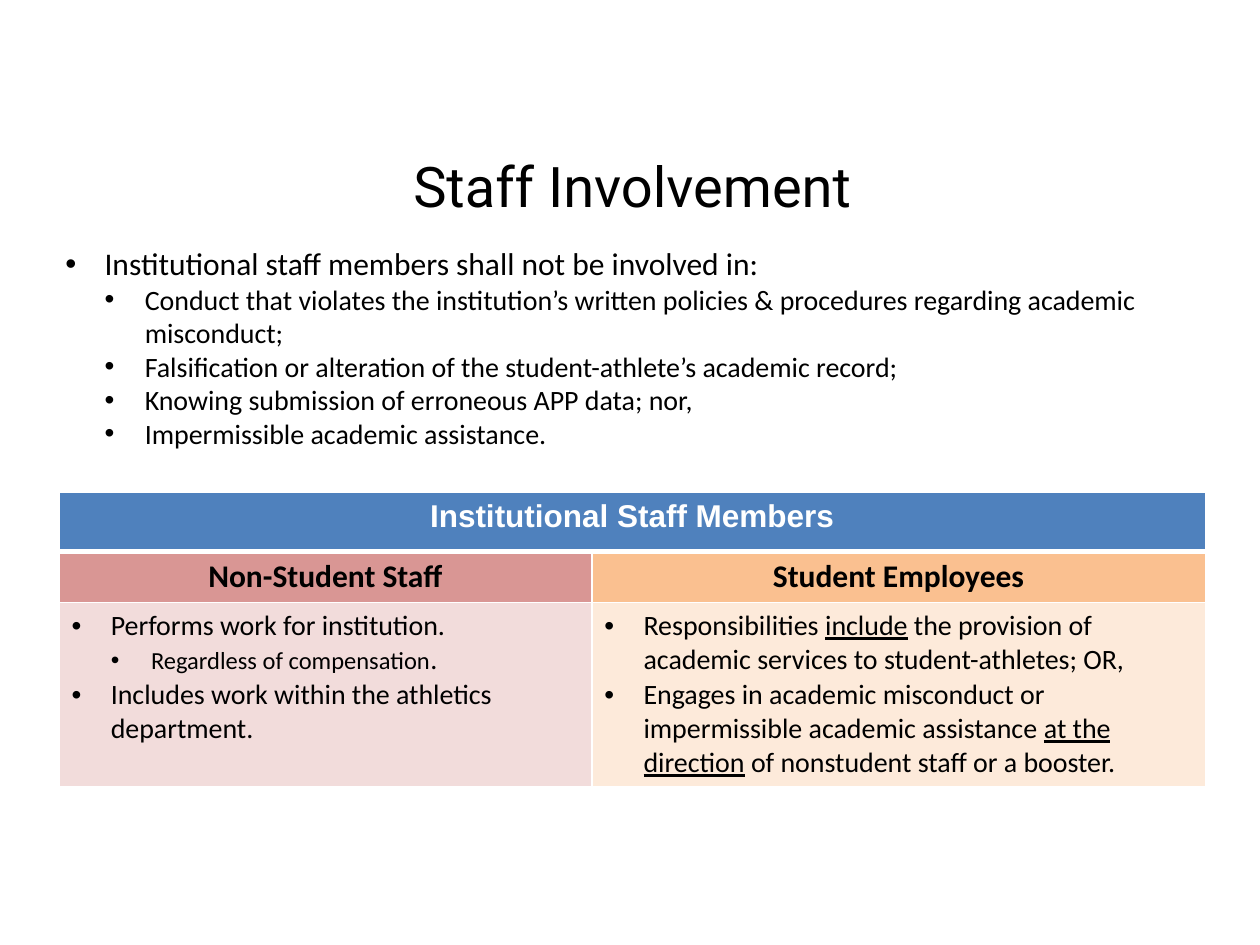
import pptx
import pptx.dml.color
import pptx.enum.text
import pptx.oxml
import pptx.oxml.ns
import pptx.util
from pptx.util import Cm

COLORS = {
    "white": "FFFFFF", "black": "000000", "blue": "4F81BD",
    "rose": "D99694", "pale_rose": "F2DCDB",
    "orange": "FAC090", "pale_orange": "FDEADA",
}
CENTER = pptx.enum.text.PP_ALIGN.CENTER
INDENTS = [(0.79, -0.79), (1.6, -0.81)]  # left margin and hanging indent in cm, by level

# A bullet is (level, spans); a span is (text, size, underlined).
RULES = [(0, [("Institutional staff members shall not be involved in:", 18, False)])] + [
    (1, [(text, 16, False)]) for text in (
        "Conduct that violates the institution’s written policies & procedures "
        "regarding academic misconduct;",
        "Falsification or alteration of the student-athlete’s academic record;",
        "Knowing submission of erroneous APP data; nor,",
        "Impermissible academic assistance.",
    )
]
NON_STUDENT = [
    (0, [("Performs work for institution.", 16, False)]),
    (1, [("Regardless of compensation", 14, False), (".", 16, False)]),
    (0, [("Includes work within the athletics department.", 16, False)]),
]
STUDENT = [
    (0, [("Responsibilities ", 16, False), ("include", 16, True),
         (" the provision of academic services to student-athletes; OR,", 16, False)]),
    (0, [("Engages in academic misconduct or impermissible academic assistance ", 16, False),
         ("at the direction", 16, True),
         (" of nonstudent staff or a booster.", 16, False)]),
]


def rgb(name):
    return pptx.dml.color.RGBColor.from_string(COLORS[name])


def style_span(span, size, font="Calibri", color="black", bold=False):
    span.font.size = pptx.util.Pt(size)
    span.font.name = font
    span.font.bold = bold
    span.font.color.rgb = rgb(color)


def write_heading(frame, text, size, **style):
    frame.text = text
    para = frame.paragraphs[0]
    para.alignment = CENTER
    style_span(para.runs[0], size, **style)


def write_bullets(frame, bullets):
    for index, (level, spans) in enumerate(bullets):
        para = frame.add_paragraph() if index else frame.paragraphs[0]
        para.level = level
        margin, indent = INDENTS[level]
        properties = para._p.get_or_add_pPr()
        properties.set("marL", str(Cm(margin)))
        properties.set("indent", str(Cm(indent)))
        namespace = pptx.oxml.ns.nsdecls("a")
        for tag in ('buFont typeface="Arial"', 'buChar char="•"'):
            properties.append(pptx.oxml.parse_xml(
                f"<a:{tag.replace(' ', f' {namespace} ', 1)}/>"))
        for text, size, underlined in spans:
            span = para.add_run()
            span.text = text
            style_span(span, size)
            if underlined:
                span.font.underline = True


def set_borders(cell, top=1, bottom=1):
    properties = cell._tc.get_or_add_tcPr()
    widths = {"lnL": 1, "lnR": 1, "lnT": top, "lnB": bottom}
    for position, (side, width) in enumerate(widths.items()):
        properties.insert(position, pptx.oxml.parse_xml(
            f'<a:{side} {pptx.oxml.ns.nsdecls("a")} w="{pptx.util.Pt(width)}">'
            f'<a:solidFill><a:srgbClr val="{COLORS["white"]}"/></a:solidFill></a:{side}>'))


def add_text_box(page, left, top, width, height):
    frame = page.shapes.add_textbox(Cm(left), Cm(top), Cm(width), Cm(height)).text_frame
    frame.word_wrap = True
    return frame


def add_title(page, *box):
    write_heading(add_text_box(page, *box), "Staff Involvement", 32, font="Roboto")


def add_rules(page, *box):
    write_bullets(add_text_box(page, *box), RULES)


def add_staff_table(page, left, top, width, height):
    table = page.shapes.add_table(3, 2, Cm(left), Cm(top), Cm(width), Cm(height)).table
    table.first_row = table.horz_banding = False
    first_column = 10.74
    for column, size in zip(table.columns, (first_column, width - first_column)):
        column.width = Cm(size)
    header, subheader = 1.19, 1
    for row, size in zip(table.rows, (header, subheader, height - header - subheader)):
        row.height = Cm(size)

    # Fills and borders, with a thick rule under the header
    fills = [("blue", "blue"), ("rose", "orange"), ("pale_rose", "pale_orange")]
    for row, names in enumerate(fills):
        for column, name in enumerate(names):
            cell = table.cell(row, column)
            cell.fill.solid()
            cell.fill.fore_color.rgb = rgb(name)
            set_borders(cell, top=3 if row == 1 else 1, bottom=3 if row == 0 else 1)

    # Spanning header
    table.cell(0, 0).merge(table.cell(0, 1))
    write_heading(table.cell(0, 0).text_frame, "Institutional Staff Members", 18,
                  font="Arial", color="white", bold=True)

    # One column for each kind of staff
    groups = [("Non-Student Staff", NON_STUDENT), ("Student Employees", STUDENT)]
    for column, (heading, bullets) in enumerate(groups):
        write_heading(table.cell(1, column).text_frame, heading, 18, bold=True)
        write_bullets(table.cell(2, column).text_frame, bullets)


def main():
    deck = pptx.Presentation()
    deck.slide_width, deck.slide_height = Cm(25.4), Cm(19.05)
    page = deck.slides.add_slide(deck.slide_layouts[6])
    add_staff_table(page, 1.19, 9.93, 23.11, 5.87)
    add_rules(page, 1.07, 4.8, 23.11, 4.62)
    add_title(page, 1.32, 2.92, 22.86, 2.39)
    deck.save("out.pptx")


if __name__ == "__main__":
    main()
